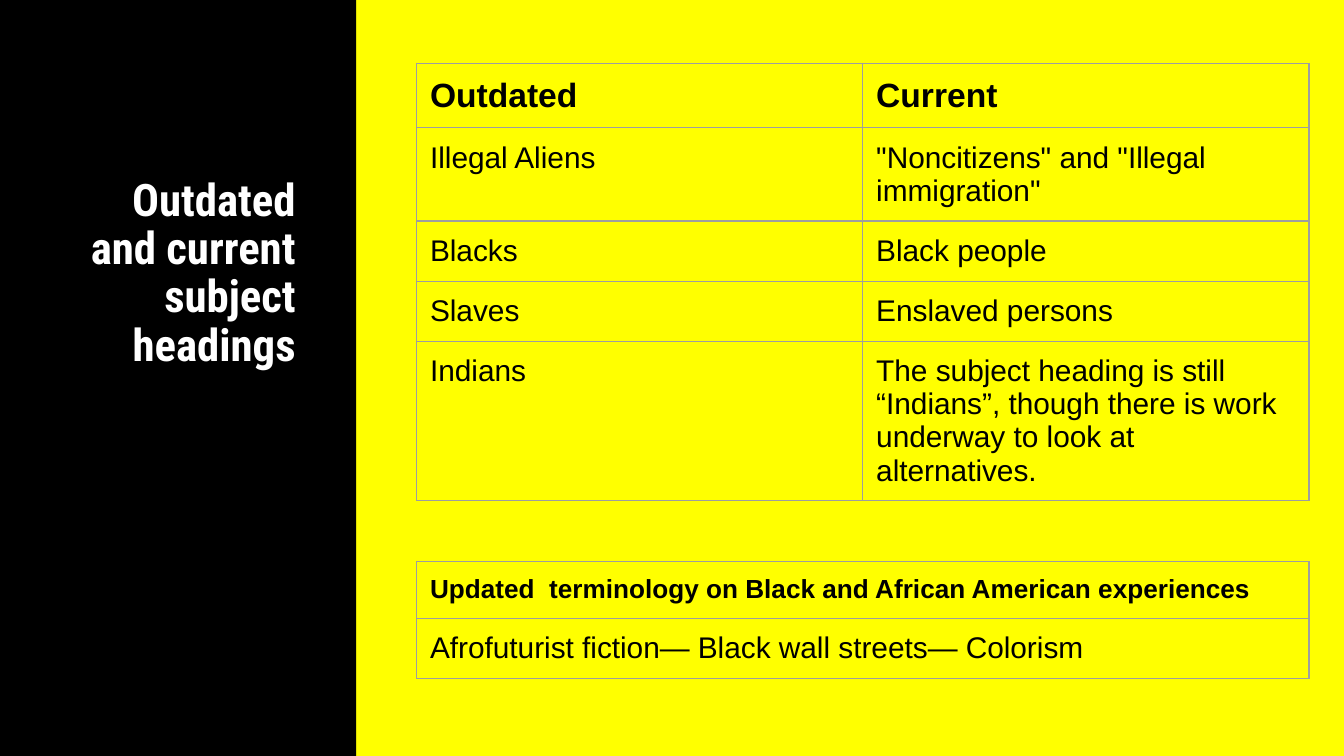
from dataclasses import dataclass

from lxml.etree import SubElement
from pptx import Presentation
from pptx.dml.color import RGBColor
from pptx.enum.shapes import MSO_SHAPE
from pptx.enum.text import MSO_ANCHOR, MSO_AUTO_SIZE, PP_ALIGN
from pptx.oxml.ns import qn
from pptx.util import Inches, Pt


@dataclass(frozen=True)
class Theme:
    background: RGBColor = RGBColor(0xFF, 0xFF, 0x00)
    panel: RGBColor = RGBColor(0x00, 0x00, 0x00)
    title: RGBColor = RGBColor(0xFF, 0xFF, 0xFF)
    text: RGBColor = RGBColor(0x00, 0x00, 0x00)
    border: str = "9E9E9E"
    title_font: str = "Roboto Condensed"
    body_font: str = "Arial"
    title_size: Pt = Pt(24)
    heading_size: Pt = Pt(18)
    subheading_size: Pt = Pt(14)
    body_size: Pt = Pt(16)
    border_width: Pt = Pt(0.75)


theme = Theme()


def add_text(para, text, font, size, color, bold):
    span = para.add_run()
    span.text = text
    span.font.name = font
    span.font.size = size
    span.font.color.rgb = color
    span.font.bold = bold


def style_cell(cell):
    cell.margin_left = cell.margin_right = Inches(0.1)
    cell.margin_top = cell.margin_bottom = Inches(0.1)
    properties = cell._tc.get_or_add_tcPr()
    for side in ("a:lnL", "a:lnR", "a:lnT", "a:lnB"):
        line = SubElement(properties, qn(side), w=str(theme.border_width))
        fill = SubElement(line, qn("a:solidFill"))
        SubElement(fill, qn("a:srgbClr"), val=theme.border)
    cell.fill.background()


deck = Presentation()
deck.slide_width = Inches(10)
deck.slide_height = deck.slide_width * 9 // 16
slide = deck.slides.add_slide(deck.slide_layouts[5])
slide.background.fill.solid()
slide.background.fill.fore_color.rgb = theme.background

panel = slide.shapes.add_shape(MSO_SHAPE.RECTANGLE, 0, 0, Inches(2.65), deck.slide_height)
panel.shadow.inherit = False
panel.fill.solid()
panel.fill.fore_color.rgb = theme.panel
panel.line.fill.background()

title = slide.shapes.title
slide.shapes._spTree.append(title._element)
title.left, title.top = Inches(0.44), Inches(1.23)
title.width, title.height = Inches(1.86), Inches(1.62)
frame = title.text_frame
frame.word_wrap = True
frame.auto_size = MSO_AUTO_SIZE.NONE
frame.vertical_anchor = MSO_ANCHOR.MIDDLE
frame.margin_left = frame.margin_right = Inches(0.1)
frame.margin_top = frame.margin_bottom = Inches(0.1)
para = frame.paragraphs[0]
para.alignment = PP_ALIGN.RIGHT
para.line_spacing = 0.9
add_text(para, "Outdated and current subject headings",
         theme.title_font, theme.title_size, theme.title, True)

heading_rows = [
    ("Outdated", "Current"),
    ("Illegal Aliens", '"Noncitizens" and "Illegal immigration"'),
    ("Blacks", "Black people"),
    ("Slaves", "Enslaved persons"),
    ("Indians", "The subject heading is still “Indians”, though there is work "
                "underway to look at alternatives."),
]
terminology_rows = [
    ("Updated  terminology on Black and African American experiences",),
    ("Afrofuturist fiction— Black wall streets— Colorism",),
]
column_width = Inches(3.32)
row_height = Inches(0.42)

for top, rows, header_size in (
    (Inches(0.47), heading_rows, theme.heading_size),
    (Inches(4.18), terminology_rows, theme.subheading_size),
):
    table = slide.shapes.add_table(len(rows), 2, Inches(3.1), top,
                                   column_width * 2, row_height * len(rows)).table
    table.first_row = False
    table.horz_banding = False
    for cell in table.iter_cells():
        style_cell(cell)
    for row, texts in enumerate(rows):
        if len(texts) == 1:
            table.cell(row, 0).merge(table.cell(row, 1))
        size = theme.body_size if row else header_size
        for column, text in enumerate(texts):
            para = table.cell(row, column).text_frame.paragraphs[0]
            add_text(para, text, theme.body_font, size, theme.text, row == 0)

deck.save("out.pptx")
